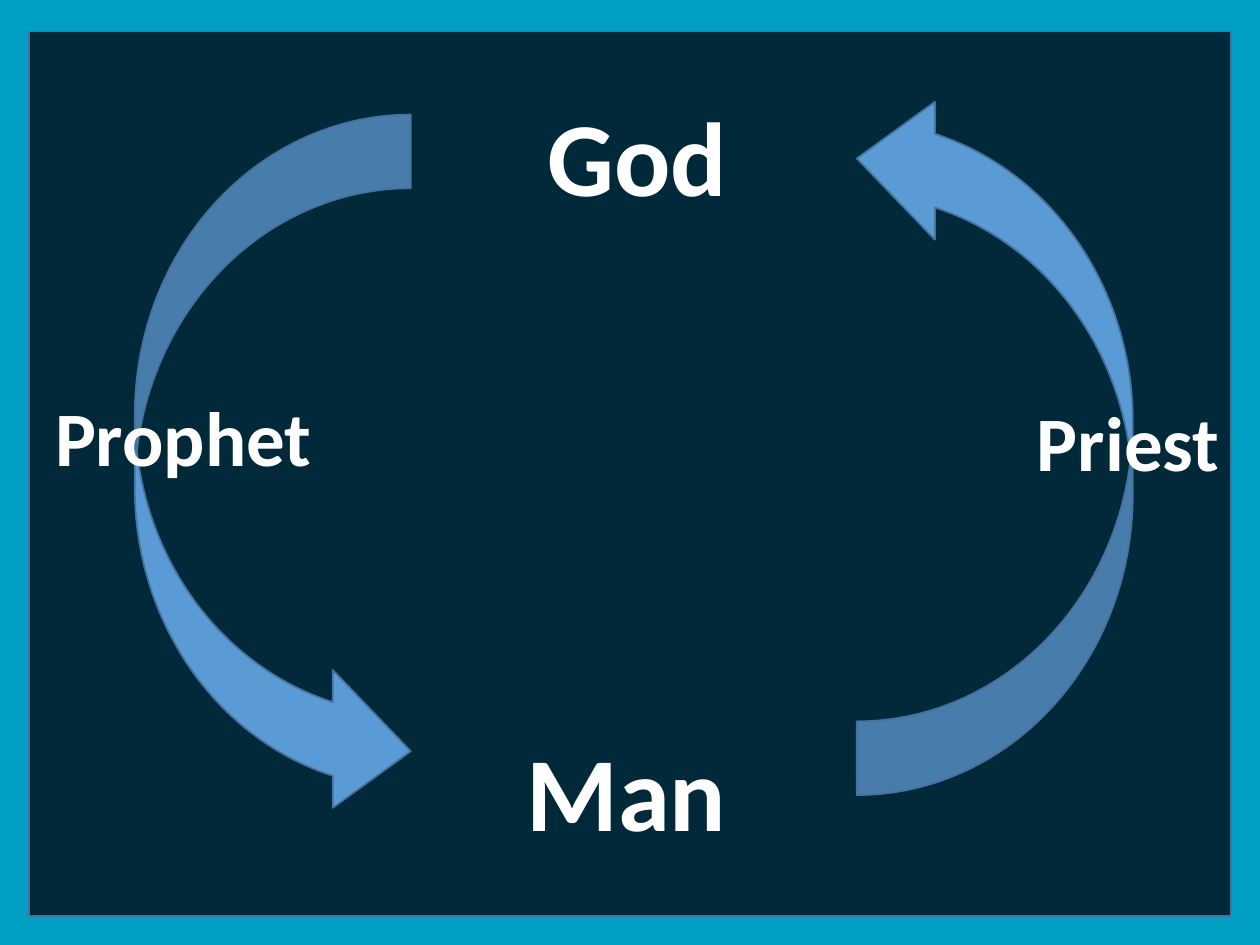
from typing import NamedTuple

from pptx import Presentation
from pptx.dml.color import RGBColor as Rgb
from pptx.enum.shapes import MSO_SHAPE as Kind
from pptx.enum.text import MSO_AUTO_SIZE as Fit, PP_ALIGN as Align
from pptx.util import Inches, Pt

HUES = {"back": "019FC4", "panel": "02293A", "arrow": "5B9BD5",
        "edge": "43739E", "text": "FFFFFF"}


class Box(NamedTuple):
    left: float
    top: float
    width: float
    height: float


class Label(NamedTuple):
    text: str
    box: Box
    size: int


class Arrow(NamedTuple):
    box: Box
    turn: int


BEND = (0.267, 0.5, 0.283)
ARROWS = [Arrow(Box(1.07, 0.91, 2.19, 5.6), 0),
          Arrow(Box(6.8, 0.71, 2.19, 5.6), 180)]
LABELS = [Label("God", Box(4.15, 0.68, 1.82, 1.11), 60),
          Label("Man", Box(4.06, 5.72, 1.82, 1.11), 60),
          Label("Priest", Box(7.32, 3.08, 3.27, 0.84), 44),
          Label("Prophet", Box(-0.18, 3.04, 3.27, 0.84), 44)]


def hue(name: str) -> Rgb:
    return Rgb.from_string(HUES[name])


def add_form(slide, kind: Kind, box: Box, fill: str):
    form = slide.shapes.add_shape(kind, *map(Inches, box))
    form.shadow.inherit = False
    form.fill.solid()
    form.fill.fore_color.rgb = hue(fill)
    form.line.color.rgb = hue("edge")
    form.line.width = Pt(1)
    return form


def add_arrow(slide, arrow: Arrow) -> None:
    form = add_form(slide, Kind.CURVED_RIGHT_ARROW, arrow.box, "arrow")
    for i, value in enumerate(BEND):
        form.adjustments[i] = value
    form.rotation = arrow.turn


def add_text(slide, text: str, box: Box, *, size: int, color: str = "text",
             font: str = "Calibri", bold: bool = True) -> None:
    frame = slide.shapes.add_textbox(*map(Inches, box)).text_frame
    frame.word_wrap = True
    frame.auto_size = Fit.SHAPE_TO_FIT_TEXT
    para = frame.paragraphs[0]
    para.alignment = Align.CENTER
    run = para.add_run()
    run.text = text
    run.font.name = font
    run.font.size = Pt(size)
    run.font.bold = bold
    run.font.color.rgb = hue(color)


def main() -> None:
    deck = Presentation()
    deck.slide_width, deck.slide_height = Inches(10), Inches(7.5)
    slide = deck.slides.add_slide(deck.slide_layouts[6])

    # Background and dark panel
    slide.background.fill.solid()
    slide.background.fill.fore_color.rgb = hue("back")
    add_form(slide, Kind.RECTANGLE, Box(0.23, 0.25, 9.54, 7.02), "panel")

    # Cycle arrows, then the labels over them
    for arrow in ARROWS:
        add_arrow(slide, arrow)
    for label in LABELS:
        add_text(slide, label.text, label.box, size=label.size)

    deck.save("out.pptx")


if __name__ == "__main__":
    main()
